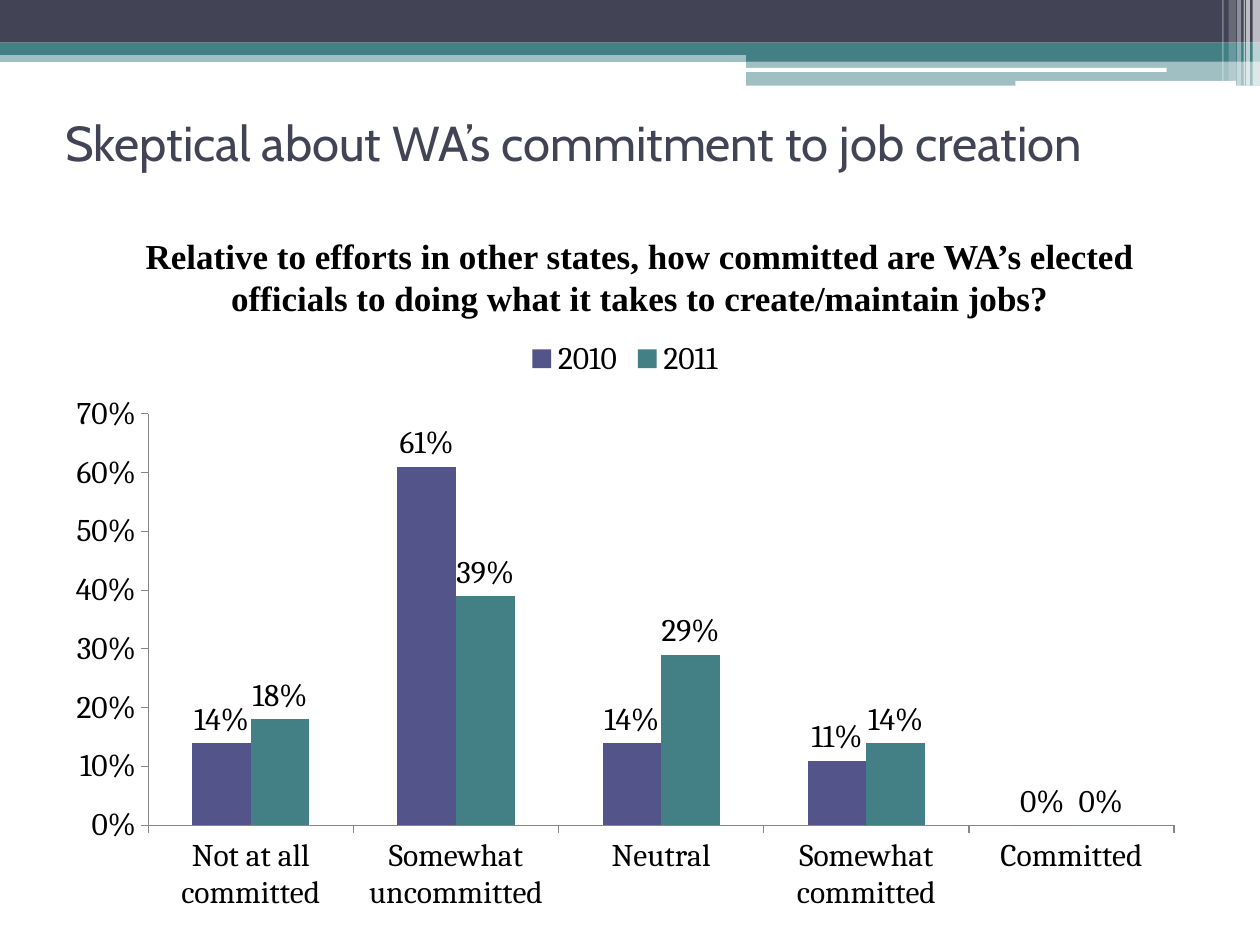
from collections import namedtuple
from dataclasses import dataclass

from lxml.etree import SubElement
from pptx import Presentation
from pptx.chart.data import CategoryChartData
from pptx.dml.color import RGBColor
from pptx.enum.chart import XL_CHART_TYPE as ChartType
from pptx.enum.chart import XL_LABEL_POSITION as LabelPosition
from pptx.enum.chart import XL_LEGEND_POSITION as LegendPosition
from pptx.enum.chart import XL_TICK_MARK as TickMark
from pptx.enum.shapes import MSO_SHAPE as ShapeKind
from pptx.enum.text import MSO_ANCHOR as Anchor
from pptx.enum.text import PP_ALIGN as Align
from pptx.oxml.ns import qn
from pptx.util import Cm, Pt

Box = namedtuple("Box", "left top width height")


@dataclass(frozen=True)
class Theme:
    dark: RGBColor = RGBColor.from_string("424456")
    teal: RGBColor = RGBColor.from_string("438086")
    violet: RGBColor = RGBColor.from_string("53548A")
    axis: RGBColor = RGBColor.from_string("868686")
    black: RGBColor = RGBColor.from_string("000000")
    white: RGBColor = RGBColor.from_string("FFFFFF")
    title_font: str = "Cabin"
    question_font: str = "Times New Roman"
    chart_font: str = "Cambria"
    title_size: Pt = Pt(28)
    question_size: Pt = Pt(20)
    chart_size: Pt = Pt(18)


THEME = Theme()


def place(box):
    return [Cm(length) for length in box]


def add_band(slide, box, color, opacity=100, kind=ShapeKind.RECTANGLE):
    band = slide.shapes.add_shape(kind, *place(box))
    band.shadow.inherit = False
    band.line.fill.background()
    band.fill.solid()
    band.fill.fore_color.rgb = color
    if opacity < 100:
        color_element = band.fill._xPr.find(".//" + qn("a:srgbClr"))
        SubElement(color_element, qn("a:alpha"), val=str(opacity * 1000))


def add_header(slide, box):
    left, top, width, height = box
    right = left + width

    # Full-width bands
    add_band(slide, Box(left, top + 1.02, width, 0.23), THEME.teal, 50)
    add_band(slide, Box(left, top, width, 0.86), THEME.dark)
    add_band(slide, Box(left, top + 0.86, width, 0.25), THEME.teal)

    # Step on the right, with two white rules
    step = 10.36
    add_band(slide, Box(right - step, top + 0.99, step, 0.25), THEME.teal)
    add_band(slide, Box(right - step, top + 1.22, step, 0.51), THEME.teal, 50)
    for offset, drop, length, thickness in ((10.39, 1.37, 8.51, 0.08), (4.93, 1.63, 4.45, 0.1)):
        rule = Box(right - offset, top + drop, length, thickness)
        add_band(slide, rule, THEME.white, kind=ShapeKind.ROUNDED_RECTANGLE)

    # Translucent stripes: distance from the right edge, width, height, opacity
    short = height - 0.1
    stripes = (
        (0.15, 0.15, height, 65),
        (0.28, 0.08, height, 65),
        (0.33, 0.03, height, 60),
        (0.46, 0.08, height, 40),
        (0.63, 0.15, short, 20),
        (0.76, 0.03, short, 30),
    )
    for offset, stripe_width, stripe_height, opacity in stripes:
        stripe = Box(right - offset, top, stripe_width, stripe_height)
        add_band(slide, stripe, THEME.white, opacity)


def add_text(slide, box, text, name, size, color, bold=False, align=Align.LEFT, anchor=Anchor.TOP):
    frame = slide.shapes.add_textbox(*place(box)).text_frame
    frame.word_wrap = True
    frame.vertical_anchor = anchor
    paragraph = frame.paragraphs[0]
    paragraph.text = text
    paragraph.alignment = align
    font = paragraph.font
    font.name, font.size, font.bold = name, size, bold
    font.color.rgb = color


def add_survey_chart(slide, box):
    data = CategoryChartData(number_format="0%")
    data.categories = [
        "Not at all committed",
        "Somewhat uncommitted",
        "Neutral",
        "Somewhat committed",
        "Committed",
    ]
    data.add_series("2010", (0.14, 0.61, 0.14, 0.11, 0))
    data.add_series("2011", (0.18, 0.39, 0.29, 0.14, 0))
    chart = slide.shapes.add_chart(ChartType.COLUMN_CLUSTERED, *place(box), data).chart
    chart.has_title = False
    chart.font.name = THEME.chart_font
    chart.font.size = THEME.chart_size
    chart.font.color.rgb = THEME.black

    chart.has_legend = True
    chart.legend.position = LegendPosition.TOP
    chart.legend.include_in_layout = False

    # Axes
    for axis in (chart.category_axis, chart.value_axis):
        axis.has_major_gridlines = False
        axis.major_tick_mark = TickMark.OUTSIDE
        axis.format.line.color.rgb = THEME.axis
        axis.format.line.width = Pt(0.75)
    values = chart.value_axis
    values.minimum_scale, values.maximum_scale, values.major_unit = 0, 0.7, 0.1
    values.tick_labels.number_format = "0%"
    values.tick_labels.number_format_is_linked = False

    # Columns and their labels
    plot = chart.plots[0]
    plot.vary_by_categories = False
    plot.gap_width = 150
    for series, color in zip(plot.series, (THEME.violet, THEME.teal)):
        series.format.fill.solid()
        series.format.fill.fore_color.rgb = color
        labels = series.data_labels
        labels.show_value = True
        labels.number_format = "0%"
        labels.number_format_is_linked = False
        labels.position = LabelPosition.OUTSIDE_END


def main():
    presentation = Presentation()
    presentation.slide_width, presentation.slide_height = Cm(25.4), Cm(19.05)
    slide = presentation.slides.add_slide(presentation.slide_layouts[6])

    add_header(slide, Box(0, 0, 25.4, 1.73))
    add_text(
        slide, Box(1.07, 1.27, 24.33, 3.18),
        "Skeptical about WA’s commitment to job creation",
        THEME.title_font, THEME.title_size, THEME.dark, anchor=Anchor.MIDDLE,
    )
    add_text(
        slide, Box(1.47, 4.6, 22.86, 1.96),
        "Relative to efforts in other states, how committed are WA’s elected "
        "officials to doing what it takes to create/maintain jobs?",
        THEME.question_font, THEME.question_size, THEME.black, bold=True, align=Align.CENTER,
    )
    add_survey_chart(slide, Box(1.07, 6.55, 23.06, 12.06))

    presentation.save("out.pptx")


if __name__ == "__main__":
    main()
